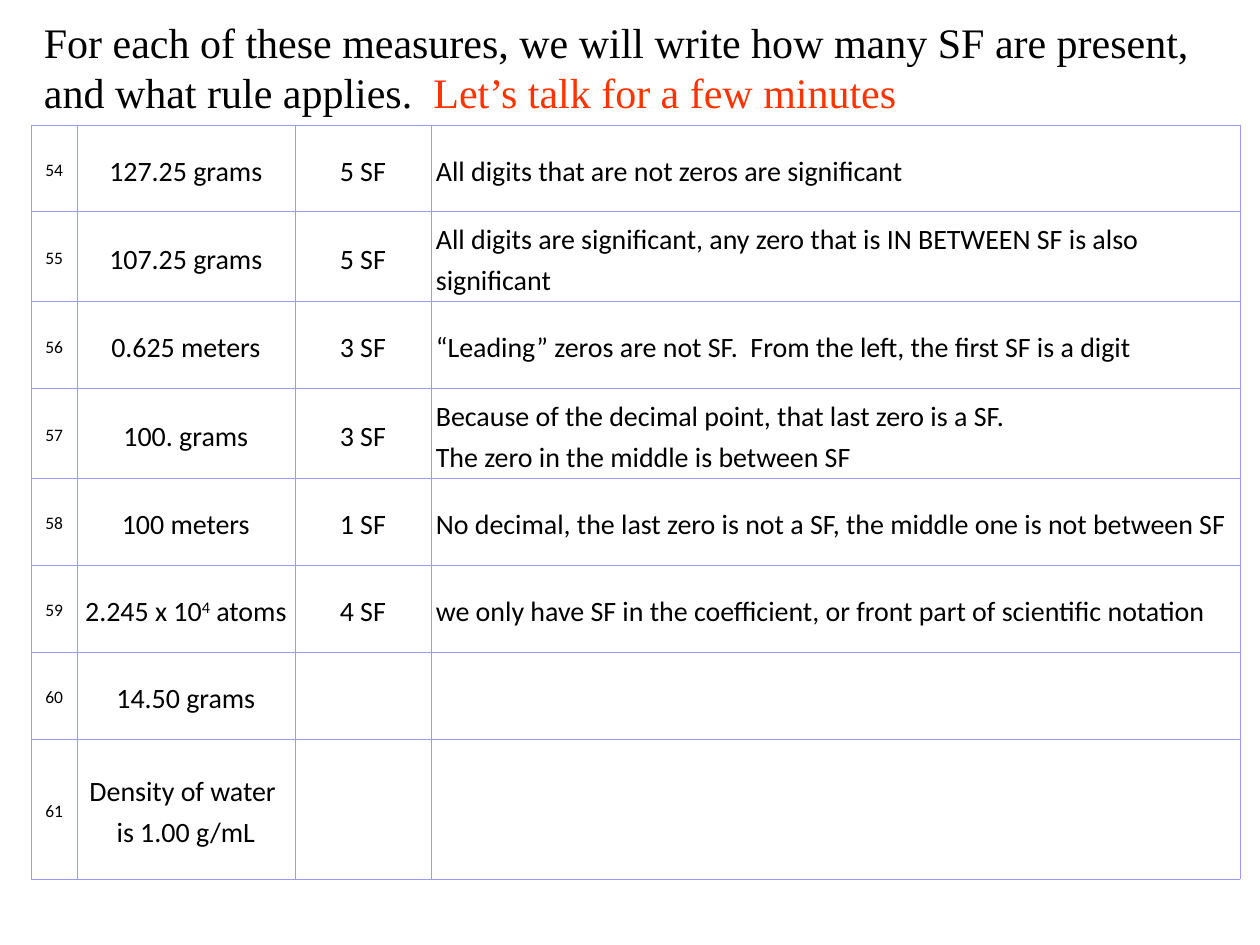
from dataclasses import dataclass

import lxml.etree
import pptx
import pptx.dml.color
import pptx.enum.text
import pptx.oxml.ns
import pptx.util

Inches = pptx.util.Inches
Pt = pptx.util.Pt
qn = pptx.oxml.ns.qn
CENTER = pptx.enum.text.PP_ALIGN.CENTER
LEFT = pptx.enum.text.PP_ALIGN.LEFT

BLACK = "000000"
ORANGE_RED = "FF3300"
BORDER = "9999FF"
BORDER_WIDTH = Pt(0.25)


@dataclass
class Measure:
    number: int
    value: str
    figures: str = ""
    rule: str = ""
    exponent: str = ""
    unit: str = ""
    height: float = 0.69


MEASURES = [
    Measure(54, "127.25 grams", "5 SF", "All digits that are not zeros are significant"),
    Measure(55, "107.25 grams", "5 SF",
            "All digits are significant, any zero that is IN BETWEEN SF is also significant"),
    Measure(56, "0.625 meters", "3 SF",
            "“Leading” zeros are not SF.  From the left, the first SF is a digit"),
    Measure(57, "100. grams", "3 SF",
            "Because of the decimal point, that last zero is a SF.\n"
            "The zero in the middle is between SF"),
    Measure(58, "100 meters", "1 SF",
            "No decimal, the last zero is not a SF, the middle one is not between SF"),
    Measure(59, "2.245 x 10", "4 SF",
            "we only have SF in the coefficient, or front part of scientific notation",
            exponent="4", unit=" atoms"),
    Measure(60, "14.50 grams"),
    Measure(61, "Density of water \nis 1.00 g/mL", height=1.11),
]
COLUMN_WIDTHS = [0.36, 1.73, 1.08, 6.42]


def color(value: str) -> pptx.dml.color.RGBColor:
    return pptx.dml.color.RGBColor.from_string(value)


def add_span(para, text: str, size: float, font: str, fill: str = BLACK,
             baseline: int = 0) -> None:
    for index, line in enumerate(text.split("\n")):
        if index:
            para.add_line_break()
        span = para.add_run()
        span.text = line
        span.font.size = Pt(size)
        span.font.name = font
        span.font.color.rgb = color(fill)
        if baseline:
            span._r.get_or_add_rPr().set("baseline", str(baseline * 1000))


def set_borders(cell) -> None:
    properties = cell._tc.get_or_add_tcPr()
    for index, side in enumerate(("lnL", "lnR", "lnT", "lnB")):
        line = lxml.etree.Element(qn(f"a:{side}"), w=str(BORDER_WIDTH))
        fill = lxml.etree.SubElement(line, qn("a:solidFill"))
        lxml.etree.SubElement(fill, qn("a:srgbClr"), val=BORDER)
        properties.insert(index, line)


def fill_cell(cell, text: str, size: float, align, exponent: str = "",
              unit: str = "") -> None:
    cell.fill.background()
    set_borders(cell)
    if not text:
        return
    cell.vertical_anchor = pptx.enum.text.MSO_ANCHOR.MIDDLE
    cell.margin_left = cell.margin_right = Inches(0.04)
    cell.margin_top = cell.margin_bottom = Inches(0.04)
    para = cell.text_frame.paragraphs[0]
    para.alignment = align
    para.line_spacing = 1.19
    para.space_after = Pt(6)
    add_span(para, text, size, "Calibri")
    if exponent:
        add_span(para, exponent, size, "Calibri", baseline=30)
        add_span(para, unit, size, "Calibri")


def add_heading(page) -> None:
    box = page.shapes.add_textbox(Inches(0.25), Inches(0.08), Inches(9.42), Inches(0.91))
    box.text_frame.word_wrap = True
    para = box.text_frame.paragraphs[0]
    add_span(para, "For each of these measures, we will write how many SF are present, "
                   "and what rule applies.  ", 24, "Times New Roman")
    add_span(para, "Let’s talk for a few minutes", 24, "Times New Roman", ORANGE_RED)


def add_measures(page) -> None:
    frame = page.shapes.add_table(
        len(MEASURES), len(COLUMN_WIDTHS), Inches(0.25), Inches(0.99),
        Inches(sum(COLUMN_WIDTHS)), Inches(sum(measure.height for measure in MEASURES)))
    table = frame.table
    table.first_row = False
    table.horz_banding = False
    for column, width in zip(table.columns, COLUMN_WIDTHS):
        column.width = Inches(width)
    for row, measure in zip(table.rows, MEASURES):
        row.height = Inches(measure.height)
        number, value, figures, rule = row.cells
        fill_cell(number, str(measure.number), 10, CENTER)
        fill_cell(value, measure.value, 16, CENTER, measure.exponent, measure.unit)
        fill_cell(figures, measure.figures, 16, CENTER)
        fill_cell(rule, measure.rule, 16, LEFT)


def main() -> None:
    deck = pptx.Presentation()
    deck.slide_width = Inches(10)
    deck.slide_height = Inches(7.5)
    page = deck.slides.add_slide(deck.slide_layouts[6])
    add_heading(page)
    add_measures(page)
    deck.save("out.pptx")


if __name__ == "__main__":
    main()
